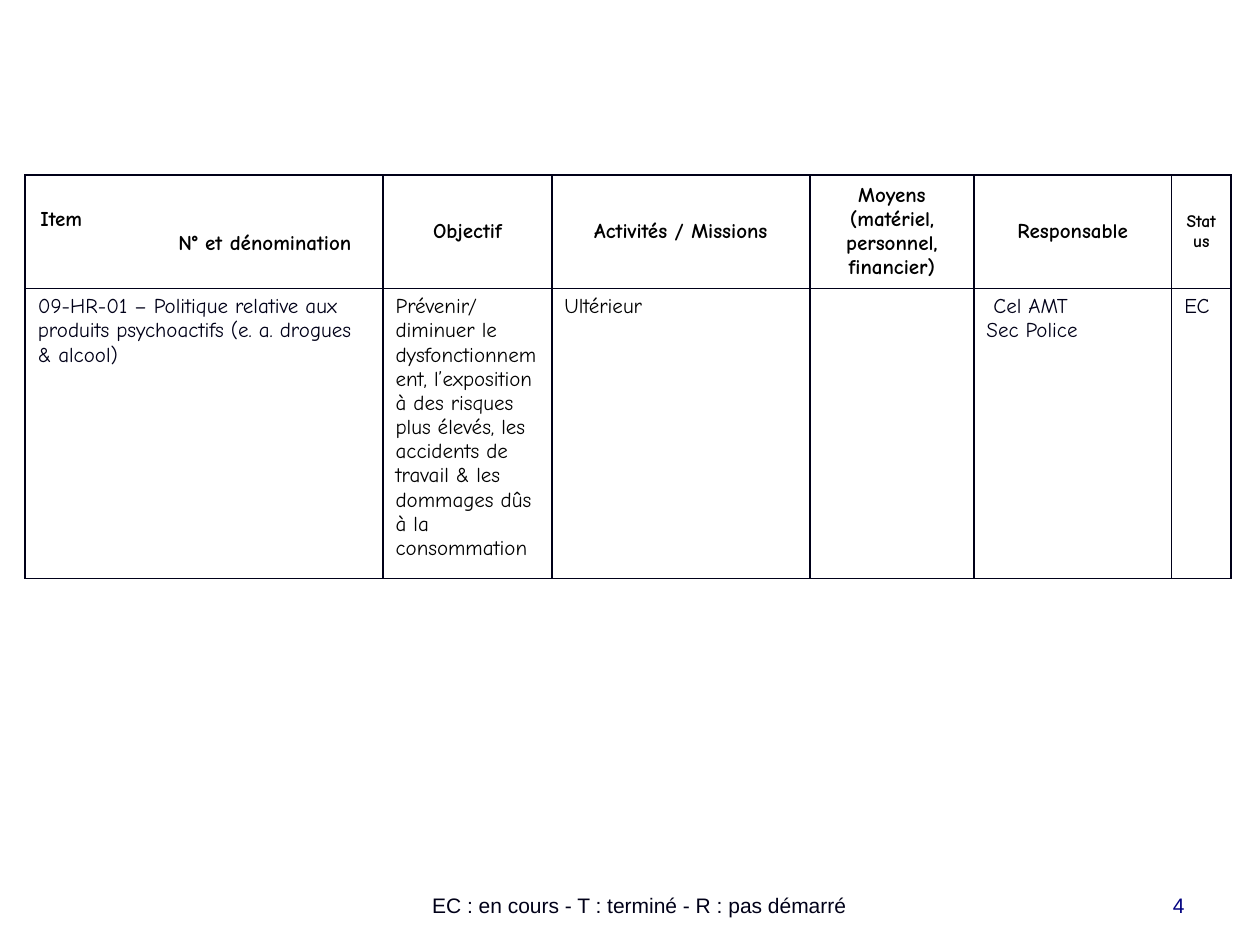
from lxml.etree import SubElement
from pptx import Presentation
from pptx.dml.color import RGBColor
from pptx.enum.text import MSO_ANCHOR as Anchor, PP_ALIGN as Align
from pptx.oxml.ns import qn
from pptx.util import Inches, Pt

INK = RGBColor(0x00, 0x00, 0x18)
BLACK = RGBColor(0x00, 0x00, 0x00)
NAVY = RGBColor(0x00, 0x00, 0x80)

WIDTH, HEIGHT = 10, 7.5
COLUMNS = [2.84, 1.34, 2.05, 1.3, 1.57, 0.47]
ROWS = [0.87, 2.21]
HEADERS = [
    [("Item", Align.LEFT), ("N° et dénomination", Align.RIGHT)],
    [("Objectif", Align.CENTER)],
    [("Activités / Missions", Align.CENTER)],
    [("Moyens (matériel, personnel, financier)", Align.CENTER)],
    [("Responsable", Align.CENTER)],
    [("Status", Align.CENTER)],
]
ENTRIES = [
    (["09-HR-01 – Politique relative aux produits psychoactifs (e. a. drogues & alcool)"], INK),
    (["Prévenir/diminuer le dysfonctionnement, l’exposition à des risques plus élevés, "
      "les accidents de travail & les dommages dûs à la consommation"], BLACK),
    (["Ultérieur"], BLACK),
    ([], BLACK),
    ([" Cel AMT", "Sec Police"], INK),
    (["EC"], INK),
]


def write(frame, lines, color, name, size=12, bold=False):
    frame.word_wrap = True
    for index, (text, align) in enumerate(lines):
        para = frame.paragraphs[0] if index == 0 else frame.add_paragraph()
        para.alignment = align
        span = para.add_run()
        span.text = text
        span.font.color.rgb = color
        for key, value in {"name": name, "size": Pt(size), "bold": bold}.items():
            setattr(span.font, key, value)


def outline(cell):
    props = cell._tc.get_or_add_tcPr()
    for side in ("lnL", "lnR", "lnT", "lnB"):
        line = SubElement(props, qn(f"a:{side}"), w=str(Pt(1)))
        fill = SubElement(line, qn("a:solidFill"))
        SubElement(fill, qn("a:srgbClr"), val=str(INK))
    cell.fill.background()


def add_plan(page, left, top):
    box = [Inches(v) for v in (left, top, sum(COLUMNS), sum(ROWS))]
    table = page.shapes.add_table(len(ROWS), len(COLUMNS), *box).table
    for flag in ("first_row", "horz_banding"):
        setattr(table, flag, False)
    for column, width in zip(table.columns, COLUMNS):
        column.width = Inches(width)
    for row, height in zip(table.rows, ROWS):
        row.height = Inches(height)
    for cell in table.iter_cells():
        outline(cell)

    for index, lines in enumerate(HEADERS):
        cell = table.cell(0, index)
        cell.vertical_anchor = Anchor.MIDDLE
        size = 10 if index == len(HEADERS) - 1 else 12
        write(cell.text_frame, lines, BLACK, "Comic Neue", size, True)
    first = table.cell(0, 0)
    first.margin_left, first.margin_right = Inches(0.12), Inches(0.25)

    for index, (texts, color) in enumerate(ENTRIES):
        lines = [(text, Align.LEFT) for text in texts]
        write(table.cell(1, index).text_frame, lines, color, "Comic Neue")


def add_footer(page, left, top, width, height, text, align, color):
    box = page.shapes.add_textbox(*[Inches(v) for v in (left, top, width, height)])
    box.text_frame.vertical_anchor = Anchor.BOTTOM
    write(box.text_frame, [(text, align)], color, "Arial")


def main():
    deck = Presentation()
    deck.slide_width, deck.slide_height = Inches(WIDTH), Inches(HEIGHT)
    page = deck.slides.add_slide(deck.slide_layouts[6])
    add_footer(page, 2.32, 6.83, 5.51, 0.5,
               "EC : en cours - T : terminé - R : pas démarré", Align.CENTER, INK)
    add_plan(page, 0.2, 1.39)
    add_footer(page, 7.17, 6.83, 2.33, 0.5, "4", Align.RIGHT, NAVY)
    deck.save("out.pptx")


if __name__ == "__main__":
    main()
